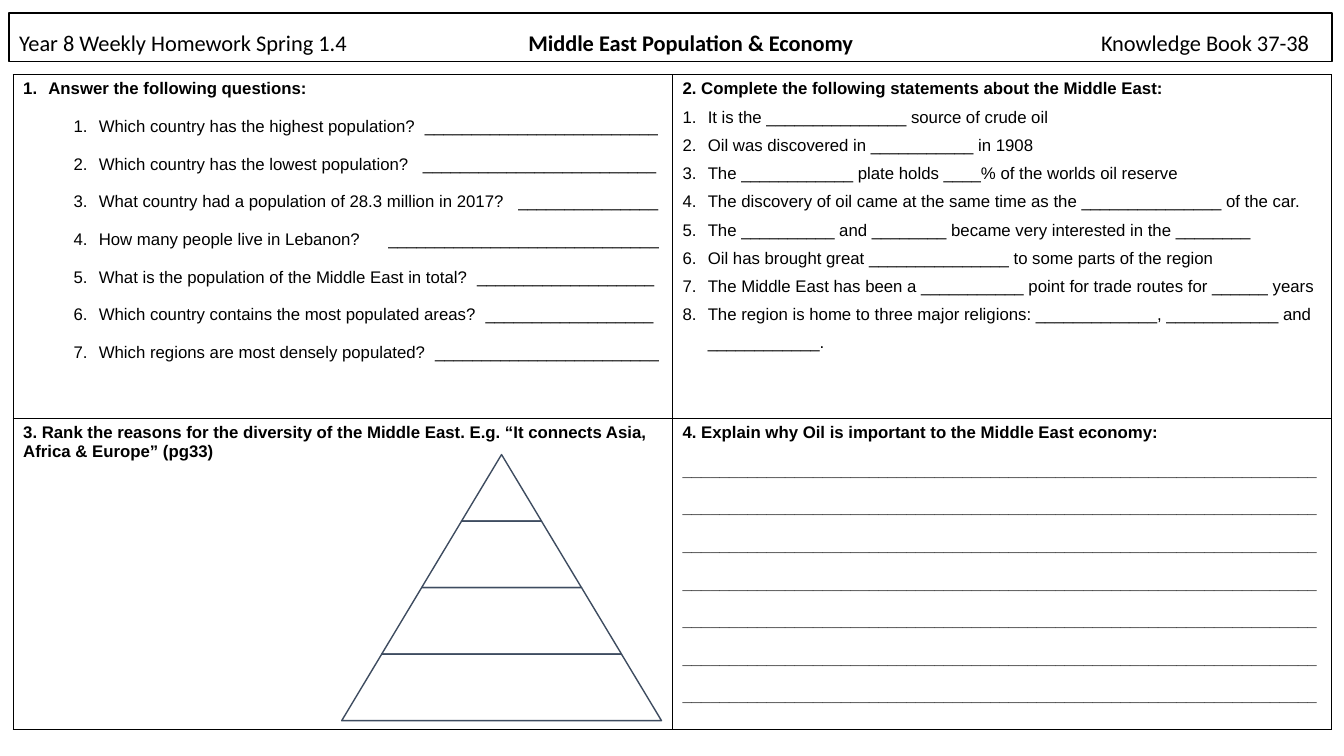
import pptx
import pptx.util
import pptx.dml.color
import pptx.enum.shapes
import pptx.enum.text
import pptx.oxml.ns
import lxml.etree

Inches = pptx.util.Inches
BLACK = pptx.dml.color.RGBColor(0, 0, 0)
WHITE = pptx.dml.color.RGBColor(0xFF, 0xFF, 0xFF)
SLATE = pptx.dml.color.RGBColor(0x3E, 0x4C, 0x60)

# Content
HEADER = ["Year 8 Weekly Homework Spring 1.4", "Middle East Population & Economy",
          "Knowledge Book 37-38"]
HEADINGS = [["Answer the following questions:",
             "2. Complete the following statements about the Middle East:"],
            ["3. Rank the reasons for the diversity of the Middle East. E.g. "
             "“It connects Asia, Africa & Europe” (pg33)",
             "4. Explain why Oil is important to the Middle East economy:"]]
QUESTIONS = [  # question, widening of the gap in points, answer line length
    ("Which country has the highest population?", 3.33, 25),
    ("Which country has the lowest population?", 6.67, 25),
    ("What country had a population of 28.3 million in 2017?", 6.67, 15),
    ("How many people live in Lebanon?", 16.67, 29),
    ("What is the population of the Middle East in total?", 3.33, 19),
    ("Which country contains the most populated areas?", 3.33, 18),
    ("Which regions are most densely populated?", 3.33, 24),
]
STATEMENTS = [
    "It is the _______________ source of crude oil",
    "Oil was discovered in ___________ in 1908",
    "The ____________ plate holds ____% of the worlds oil reserve",
    "The discovery of oil came at the same time as the _______________ of the car.",
    "The __________ and ________ became very interested in the ________",
    "Oil has brought great _______________ to some parts of the region",
    "The Middle East has been a ___________ point for trade routes for ______ years",
    "The region is home to three major religions: _____________, ____________ and ____________.",
]
ANSWER_LINES, LINE_LENGTH = 7, 68

# Layout in inches
HEADER_BOX = (0.09, 0.13, 13.12, 0.48)
HEADER_TABS = (5.05, 10.73)
TABLE_LEFT, TABLE_TOP, COLUMN_WIDTH = 0.13, 0.74, 6.54
ROW_HEIGHTS = (3.41, 3.09)
PYRAMID_CENTRE, PYRAMID_TOP = 4.975, 4.51
TIER_COUNT, TIER_HEIGHT, TIER_STEP = 4, 0.66, 0.793


def add_element(parent, tag, **attributes):
    element = lxml.etree.SubElement(parent, pptx.oxml.ns.qn(tag))
    for name, value in attributes.items():
        element.set(name, str(value))
    return element


def add_text(paragraph, text, size=12, font="Arial", bold=False, spacing=0):
    run = paragraph.add_run()
    run.text = text
    run.font.size = pptx.util.Pt(size)
    run.font.name = font
    run.font.bold = bold
    run.font.color.rgb = BLACK
    if spacing:
        run.font._element.set("spc", str(round(spacing * 100)))


def number_paragraph(paragraph, indent, level=0):
    paragraph.level = level
    properties = paragraph._p.get_or_add_pPr()
    properties.set("marL", str(Inches(indent)))
    properties.set("indent", str(Inches(-0.25)))
    add_element(properties, "a:buFont", typeface="+mj-lt")
    add_element(properties, "a:buAutoNum", type="arabicPeriod")


def add_paragraph(cell, line_spacing):
    paragraph = cell.text_frame.add_paragraph()
    paragraph.line_spacing = line_spacing
    return paragraph


def add_borders(cell):
    properties = cell._tc.get_or_add_tcPr()
    for side in ("a:lnL", "a:lnR", "a:lnT", "a:lnB"):
        line = add_element(properties, side, w=pptx.util.Pt(1))
        fill = add_element(line, "a:solidFill")
        add_element(fill, "a:srgbClr", val=BLACK)


def outline(shape, color):
    shape.fill.solid()
    shape.fill.fore_color.rgb = WHITE
    shape.line.color.rgb = color
    shape.line.width = pptx.util.Pt(1)


def add_header(slide):
    title = slide.shapes.title
    title.left, title.top, title.width, title.height = map(Inches, HEADER_BOX)
    outline(title, BLACK)
    frame = title.text_frame
    frame.word_wrap = True
    frame.auto_size = pptx.enum.text.MSO_AUTO_SIZE.NONE
    frame.vertical_anchor = pptx.enum.text.MSO_ANCHOR.BOTTOM
    paragraph = frame.paragraphs[0]
    paragraph.alignment = pptx.enum.text.PP_ALIGN.LEFT
    paragraph.line_spacing = 0.9
    tabs = add_element(paragraph._p.get_or_add_pPr(), "a:tabLst")
    for position in HEADER_TABS:
        add_element(tabs, "a:tab", pos=Inches(position), algn="l")
    for index, text in enumerate(HEADER):
        add_text(paragraph, "\t" * (index > 0) + text, size=16, font="Calibri", bold=index == 1)


def add_worksheet(slide):
    table = slide.shapes.add_table(
        2, 2, Inches(TABLE_LEFT), Inches(TABLE_TOP),
        Inches(2 * COLUMN_WIDTH), Inches(sum(ROW_HEIGHTS))).table
    table.first_row = table.horz_banding = False
    for column in table.columns:
        column.width = Inches(COLUMN_WIDTH)
    for row, height in enumerate(ROW_HEIGHTS):
        table.rows[row].height = Inches(height)
        for column, heading in enumerate(HEADINGS[row]):
            cell = table.cell(row, column)
            add_borders(cell)
            cell.fill.background()
            add_text(cell.text_frame.paragraphs[0], heading, bold=True)

    # Questions with answer lines
    cell = table.cell(0, 0)
    number_paragraph(cell.text_frame.paragraphs[0], 0.25)
    for question, gap, length in QUESTIONS:
        paragraph = add_paragraph(cell, 2.0)
        number_paragraph(paragraph, 0.75, level=1)
        add_text(paragraph, question)
        add_text(paragraph, " ", spacing=gap)
        add_text(paragraph, "_" * length)

    # Statements to complete
    for statement in STATEMENTS:
        paragraph = add_paragraph(table.cell(0, 1), 1.5)
        number_paragraph(paragraph, 0.25)
        add_text(paragraph, statement)

    # Ruled writing space
    add_text(add_paragraph(table.cell(1, 1), 2.0), "_" * (ANSWER_LINES * LINE_LENGTH), bold=True)


def add_pyramid(slide):
    pyramid = slide.shapes.add_group_shape()
    for tier in range(TIER_COUNT):
        width = TIER_STEP * (tier + 1)
        shape = pyramid.shapes.add_shape(
            pptx.enum.shapes.MSO_SHAPE.TRAPEZOID,
            Inches(PYRAMID_CENTRE - width / 2), Inches(PYRAMID_TOP + tier * TIER_HEIGHT),
            Inches(width), Inches(TIER_HEIGHT))
        shape.adjustments[0] = 0.601
        shape.shadow.inherit = False
        outline(shape, SLATE)


def main():
    presentation = pptx.Presentation()
    presentation.slide_width = Inches(13.33)
    presentation.slide_height = Inches(7.5)
    slide = presentation.slides.add_slide(presentation.slide_layouts.get_by_name("Title Only"))
    add_header(slide)
    add_worksheet(slide)
    add_pyramid(slide)
    presentation.save("out.pptx")


if __name__ == "__main__":
    main()
